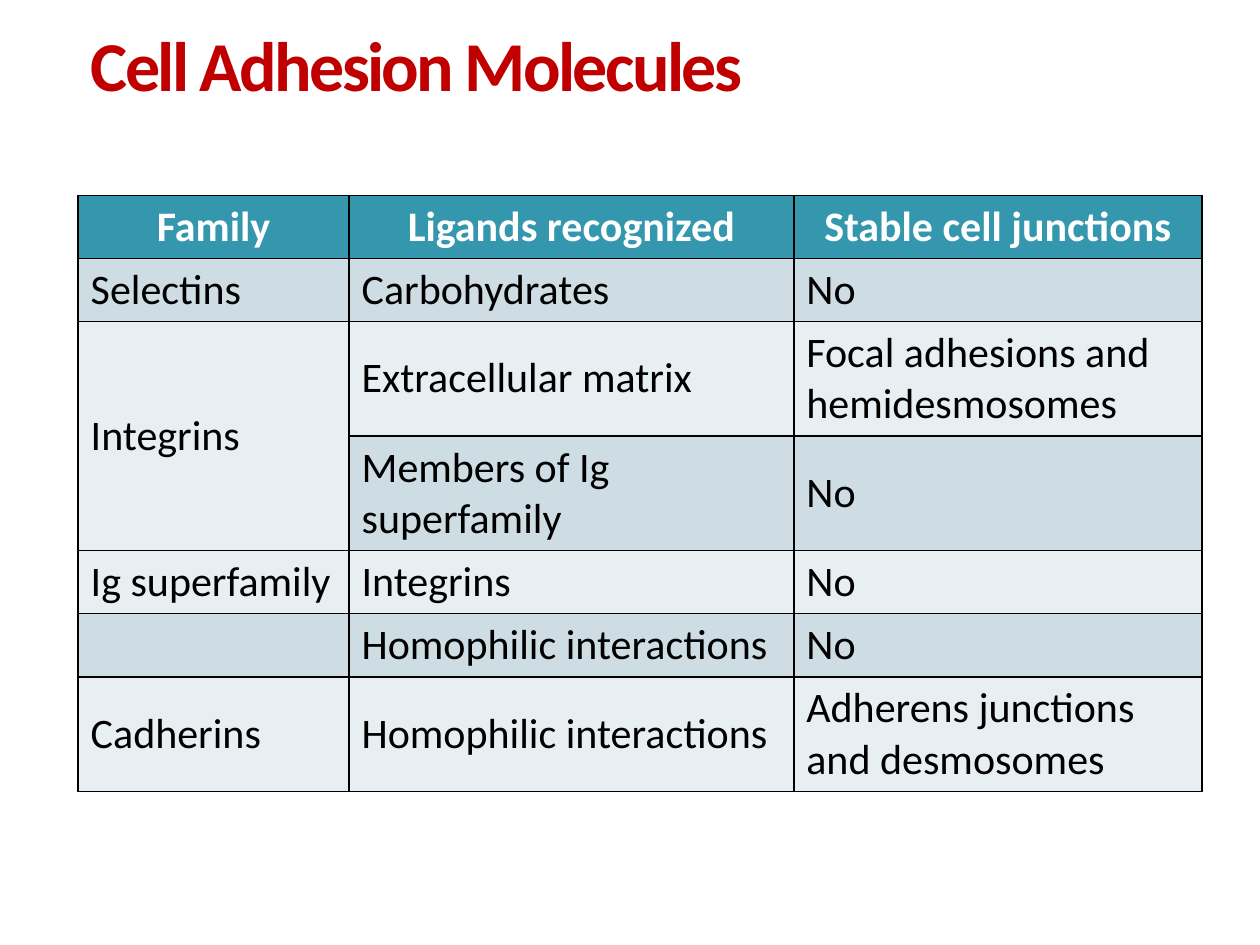
from dataclasses import dataclass

from lxml import etree
from pptx import Presentation
from pptx.dml.color import RGBColor
from pptx.enum.text import MSO_ANCHOR as Anchor, PP_ALIGN as Align
from pptx.oxml.ns import qn
from pptx.util import Inches, Pt

COLORS = {
    "title": "C00000",
    "header": "3497AE",
    "odd_row": "CEDDE3",
    "even_row": "E8EFF2",
    "header_text": "FFFFFF",
    "body_text": "000000",
    "border": "000000",
}
FONT = "Calibri"
COLUMN_WIDTHS = (2.15, 3.53, 3.24)
ONE_LINE, TWO_LINES = 0.5, 0.91


@dataclass
class TableRow:
    texts: tuple[str, str, str]
    height: float = ONE_LINE


ROWS = [
    TableRow(("Family", "Ligands recognized", "Stable cell junctions")),
    TableRow(("Selectins", "Carbohydrates", "No")),
    TableRow(("Integrins", "Extracellular matrix", "Focal adhesions and hemidesmosomes"), TWO_LINES),
    TableRow(("", "Members of Ig superfamily", "No"), TWO_LINES),
    TableRow(("Ig superfamily", "Integrins", "No")),
    TableRow(("", "Homophilic interactions", "No")),
    TableRow(("Cadherins", "Homophilic interactions", "Adherens junctions and desmosomes"), TWO_LINES),
]


def style_font(font, size: float, color: str, bold: bool) -> None:
    font.name = FONT
    font.size = Pt(size)
    font.bold = bold
    font.color.rgb = RGBColor.from_string(COLORS[color])


def add_borders(cell) -> None:
    """Put a thin line on all four sides; lines come before the fill."""
    properties = cell._tc.get_or_add_tcPr()
    for index, side in enumerate(("lnL", "lnR", "lnT", "lnB")):
        line = etree.Element(qn(f"a:{side}"), w=str(Pt(1)))
        fill = etree.SubElement(line, qn("a:solidFill"))
        etree.SubElement(fill, qn("a:srgbClr"), val=COLORS["border"])
        properties.insert(index, line)


def fill_cell(cell, text: str, row_index: int) -> None:
    is_header = row_index == 0
    fill_name = "header" if is_header else ("odd_row" if row_index % 2 else "even_row")
    cell.fill.solid()
    cell.fill.fore_color.rgb = RGBColor.from_string(COLORS[fill_name])
    add_borders(cell)
    cell.vertical_anchor = Anchor.MIDDLE
    if not text:
        return
    cell.text_frame.text = text
    paragraph = cell.text_frame.paragraphs[0]
    paragraph.alignment = Align.CENTER if is_header else Align.LEFT
    text_color = "header_text" if is_header else "body_text"
    style_font(paragraph.runs[0].font, 24, text_color, is_header)


def add_title(slide, text: str) -> None:
    shape = slide.shapes.add_textbox(Inches(0.72), Inches(0.25), Inches(7.95), Inches(0.61))
    frame = shape.text_frame
    frame.word_wrap = True
    frame.margin_left = frame.margin_right = frame.margin_top = frame.margin_bottom = 0
    frame.text = text
    paragraph = frame.paragraphs[0]
    paragraph.line_spacing = 0.9
    run = paragraph.runs[0]
    style_font(run.font, 40, "title", True)
    run._r.get_or_add_rPr().set("spc", "-150")  # tight letter spacing


def add_adhesion_table(slide) -> None:
    table = slide.shapes.add_table(
        len(ROWS), len(COLUMN_WIDTHS), Inches(0.62), Inches(1.55),
        Inches(sum(COLUMN_WIDTHS)), Inches(sum(row.height for row in ROWS)),
    ).table
    for column, width in zip(table.columns, COLUMN_WIDTHS):
        column.width = Inches(width)
    for row_index, row in enumerate(ROWS):
        table.rows[row_index].height = Inches(row.height)
        for column_index, text in enumerate(row.texts):
            fill_cell(table.cell(row_index, column_index), text, row_index)
    # Integrins cover two ligand rows
    table.cell(2, 0).merge(table.cell(3, 0))


def main() -> None:
    presentation = Presentation()
    presentation.slide_width = Inches(10)
    presentation.slide_height = Inches(7.5)
    slide = presentation.slides.add_slide(presentation.slide_layouts[6])
    add_title(slide, "Cell Adhesion Molecules")
    add_adhesion_table(slide)
    presentation.save("out.pptx")


if __name__ == "__main__":
    main()
